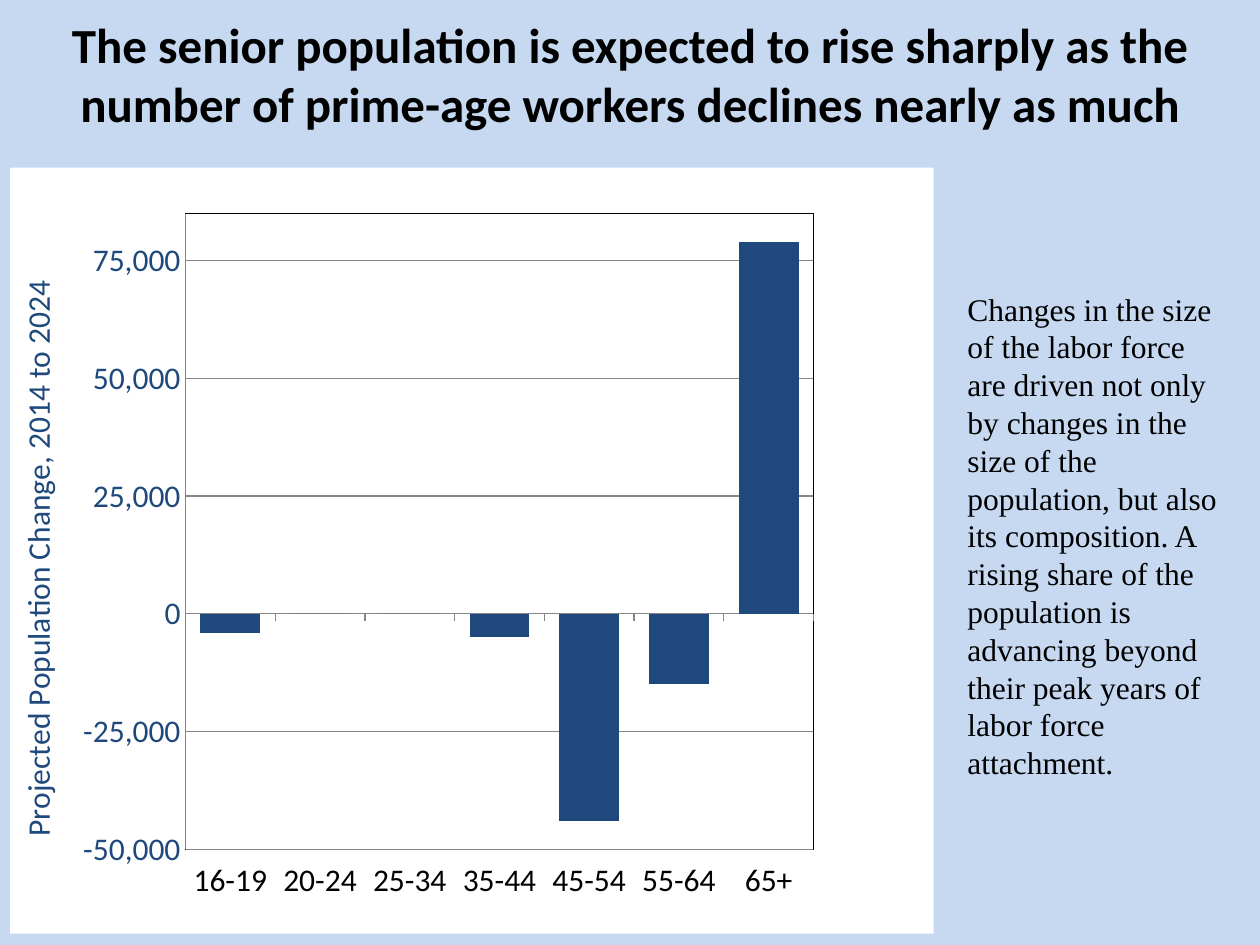
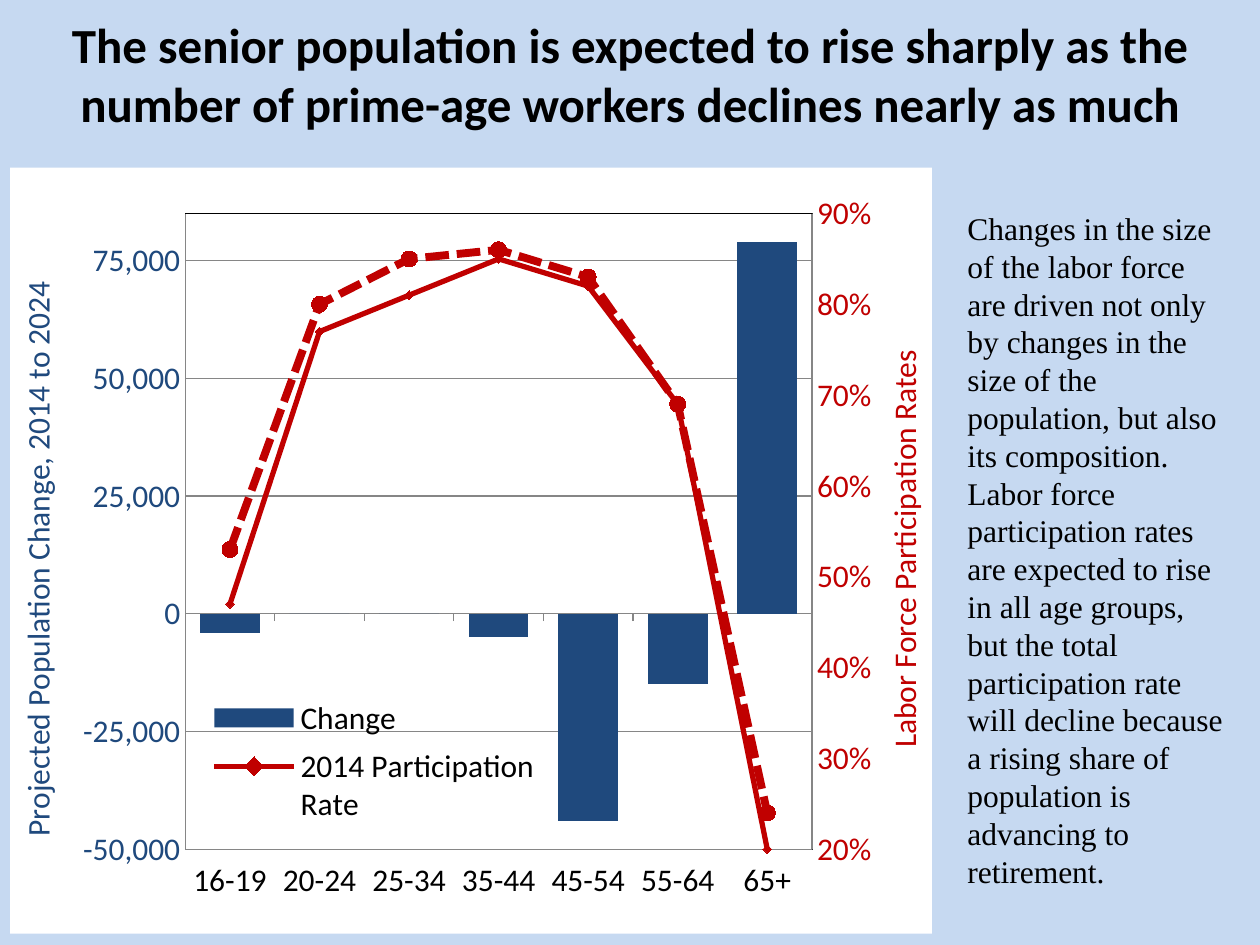
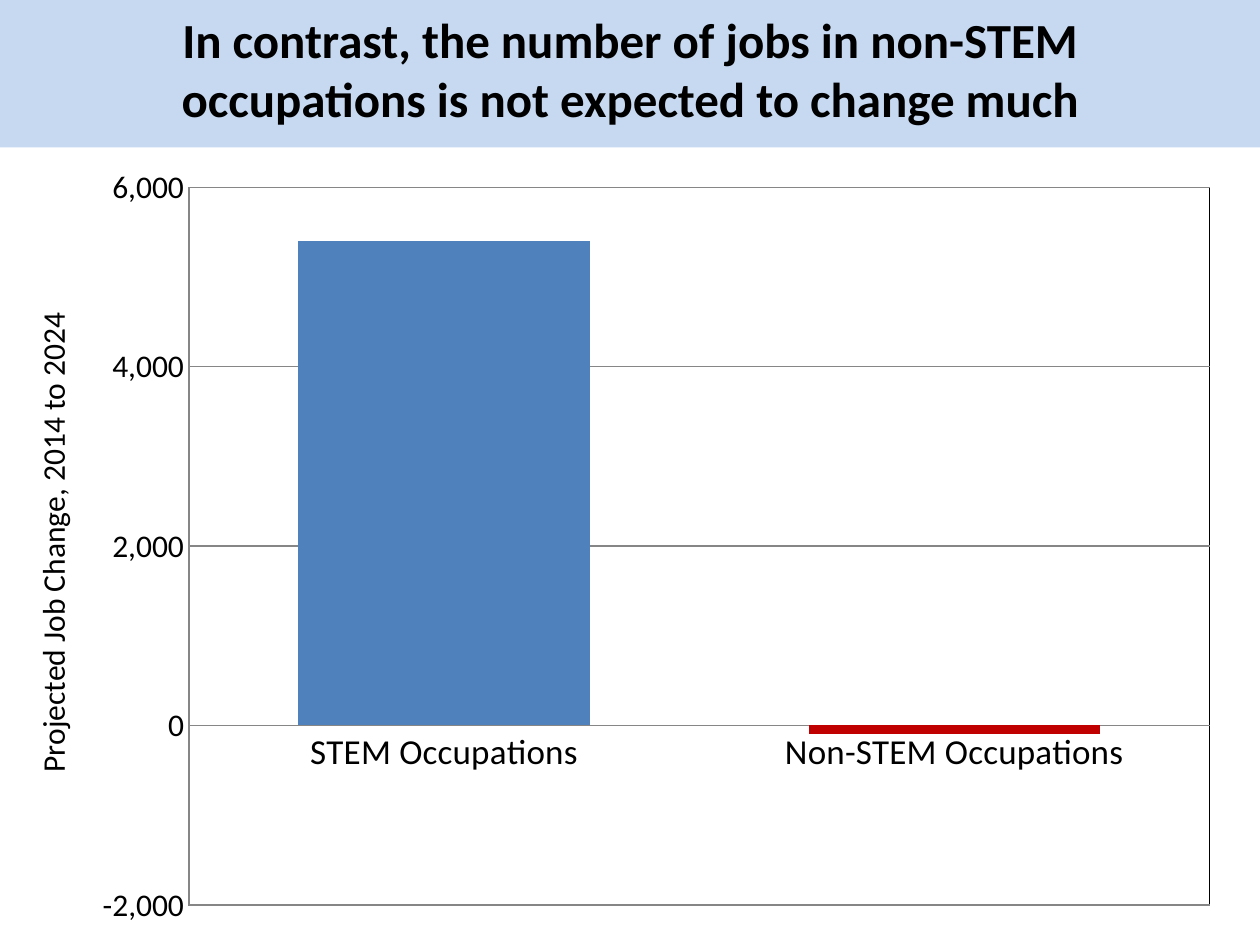
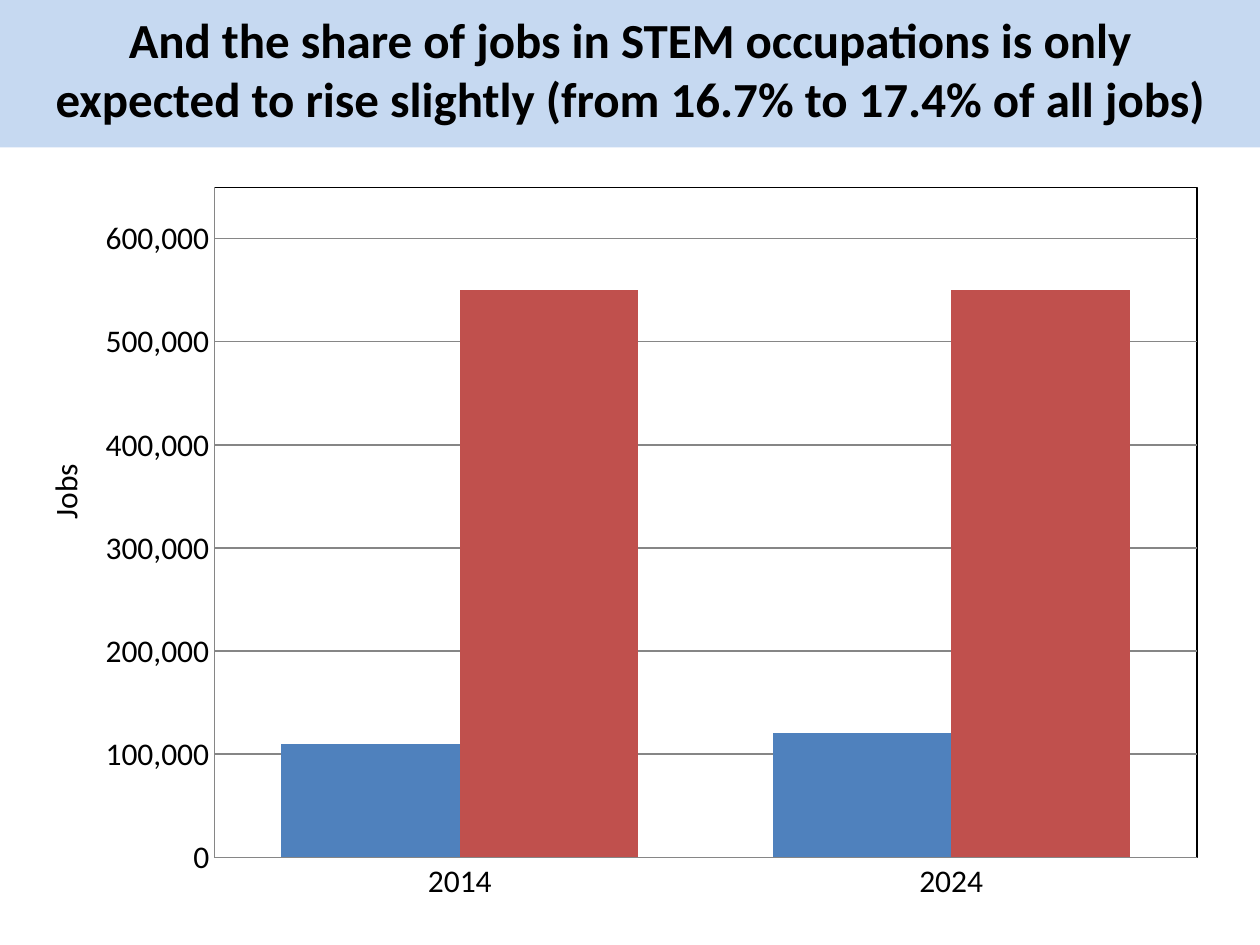
from pptx import Presentation
from pptx.chart.axis import ValueAxis
from pptx.chart.data import CategoryChartData
from pptx.dml.color import RGBColor
from pptx.enum.chart import (XL_CHART_TYPE, XL_LEGEND_POSITION, XL_MARKER_STYLE,
                             XL_TICK_LABEL_POSITION, XL_TICK_MARK)
from pptx.enum.dml import MSO_LINE
from pptx.enum.text import MSO_ANCHOR, PP_ALIGN
from pptx.oxml import parse_xml
from pptx.oxml.ns import nsdecls, qn
from pptx.util import Inches, Pt

# Shared style
COLORS = {"background": "C6D9F1", "text": "000000", "white": "FFFFFF",
          "grid": "868686", "navy": "1F497D", "red": "C00000",
          "blue": "4F81BD", "brick": "C0504D"}
TITLE_STYLE = {"name": "Calibri", "size": Pt(28), "bold": True}
BODY_STYLE = {"name": "Times New Roman", "size": Pt(18)}
LABEL_STYLE = {"name": "Calibri", "size": Pt(18), "bold": False}

# Content: boxes are left, top, width, height; layouts are fractions of the chart
AGES = ["16-19", "20-24", "25-34", "35-44", "45-54", "55-64", "65+"]
AGE_CHANGES = [-4000, 0, 0, -5000, -44000, -15000, 79000]
SENIOR_TITLE = ("The senior population is expected to rise sharply as the "
                "number of prime-age workers declines nearly as much")
BODY_START = ("Changes in the size of the labor force are driven not only by changes "
              "in the size of the population, but also its composition. ")
AGE_TITLE_BOX, JOB_TITLE_BOX = (0.15, 0.25, 9.7, 0.67), (0.2, 0.08, 9.6, 0.92)

AGE_CHART = {
    "box": (0.08, 1.33, 7.33, 6.08), "plot": (0.19, 0.06, 0.68, 0.83),
    "categories": AGES, "gap": 50, "low_labels": True,
    "axis": {"title": "Projected Population Change, 2014 to 2024", "color": "navy",
             "scale": (-50000, 85000, 25000), "format": "#,##0", "at": (0, 0.14)},
}
JOB_CHART = {"box": (0, 1.17, 10, 6.33), "gap": 75}

SLIDES = [
    {"title": SENIOR_TITLE, "title_box": AGE_TITLE_BOX, "body_box": (7.58, 2.25, 2.25, 4.04),
     "body": BODY_START + "A rising share of the population is advancing beyond "
                          "their peak years of labor force attachment.",
     "chart": {**AGE_CHART, "series": [("Series 1", AGE_CHANGES, "navy")]}},
    {"title": SENIOR_TITLE, "title_box": AGE_TITLE_BOX, "body_box": (7.58, 1.61, 2.25, 5.55),
     "body": BODY_START + "Labor force participation rates are expected to rise in all age "
                          "groups, but the total participation rate will decline because "
                          "a rising share of population is advancing to retirement.",
     "chart": {**AGE_CHART,
               "series": [("Change", AGE_CHANGES, "navy"),
                          ("2014 Participation Rate",
                           [0.47, 0.77, 0.81, 0.85, 0.82, 0.69, 0.2], "red"),
                          ("2024 Participation Rate",
                           [0.53, 0.8, 0.85, 0.86, 0.83, 0.69, 0.24], "red")],
               "lines": [(3, MSO_LINE.SOLID, XL_MARKER_STYLE.DIAMOND, 5),
                         (4.5, MSO_LINE.SQUARE_DOT, XL_MARKER_STYLE.CIRCLE, 9)],
               "right_axis": {"title": "Labor Force Participation Rates", "color": "red",
                              "scale": (0.2, 0.9, 0.1), "format": "0%", "at": (0.94, 0.23)},
               "legend": (0.21, 0.68, 0.37, 0.19)}},
    {"title": "In contrast, the number of jobs in non-STEM\n"
              "occupations is not expected to change much",
     "title_box": JOB_TITLE_BOX,
     "chart": {**JOB_CHART, "plot": (0.15, 0.05, 0.81, 0.9), "category_size": 20,
               "categories": ["STEM Occupations", "Non-STEM Occupations"],
               "series": [("Series 1", [5400, -100], "blue")], "points": {1: "red"},
               "axis": {"title": "Projected Job Change, 2014 to 2024", "color": "text",
                        "scale": (-2000, 6000, 2000), "format": "#,##0",
                        "at": (0.02, 0.2)}}},
    {"title": "And the share of jobs in STEM occupations is only expected "
              "to rise slightly (from 16.7% to 17.4% of all jobs)",
     "title_box": JOB_TITLE_BOX,
     "chart": {**JOB_CHART, "plot": (0.17, 0.05, 0.78, 0.84), "categories": ["2014", "2024"],
               "series": [("STEM Occupations", [110000, 120000], "blue"),
                          ("Non-STEM Occupations", [550000, 550000], "brick")],
               "axis": {"title": "Jobs", "color": "text", "scale": (0, 650000, 100000),
                        "format": "#,##0", "at": (0.03, 0.39)}}},
]


def color(name):
    return RGBColor.from_string(COLORS[name])


def style_font(font, style, color_name="text"):
    for attribute, value in style.items():
        setattr(font, attribute, value)
    font.color.rgb = color(color_name)


def fill_solid(fill, color_name):
    fill.solid()
    fill.fore_color.rgb = color(color_name)


def style_line(line, color_name, width=0.75):
    line.color.rgb = color(color_name)
    line.width = Pt(width)


def add_text(page, text, place, style, align=PP_ALIGN.LEFT, anchor=MSO_ANCHOR.TOP):
    box = page.shapes.add_textbox(*map(Inches, place))
    frame = box.text_frame
    frame.word_wrap = True
    frame.vertical_anchor = anchor
    para = frame.paragraphs[0]
    para.text = text
    para.alignment = align
    for span in para.runs:
        style_font(span.font, style)


# Chart parts that need XML
def set_layout(element, place, index, inner=False):
    """Give a plot area, title or legend a fixed place."""
    old = element.find(qn("c:layout"))
    if old is not None:
        index = element.index(old)
        element.remove(old)
    target = '<c:layoutTarget val="inner"/>' if inner else ""
    modes = "".join(f'<c:{name}Mode val="edge"/>' for name in "xy")
    values = "".join(f'<c:{name} val="{value}"/>' for name, value in zip("xywh", place))
    element.insert(index, parse_xml(
        f'<c:layout {nsdecls("c")}><c:manualLayout>{target}{modes}{values}'
        '</c:manualLayout></c:layout>'))


def shape_properties(fill, line):
    def solid(name):
        return (f'<a:solidFill><a:srgbClr val="{COLORS[name]}"/></a:solidFill>'
                if name else "<a:noFill/>")
    return parse_xml(f'<c:spPr {nsdecls("c", "a")}>{solid(fill)}'
                     f'<a:ln w="{Pt(0.75)}">{solid(line)}</a:ln></c:spPr>')


def move_to_right_axis(chart, line_styles):
    """Turn all series after the first into lines on a second value axis."""
    area = chart._chartSpace.chart.plotArea
    bars = area.find(qn("c:barChart"))
    lines = parse_xml(f'<c:lineChart {nsdecls("c")}><c:grouping val="standard"/>'
                      '<c:varyColors val="0"/><c:marker val="1"/>'
                      '<c:axId val="5001"/><c:axId val="5002"/></c:lineChart>')
    for offset, series in enumerate(bars.findall(qn("c:ser"))[1:]):
        for flag in series.findall(qn("c:invertIfNegative")):
            series.remove(flag)
        lines.insert(2 + offset, series)
    bars.addnext(lines)

    def axis_xml(kind, number, other, deleted, side, crosses):
        return parse_xml(
            f'<c:{kind} {nsdecls("c")}><c:axId val="{number}"/><c:scaling>'
            f'<c:orientation val="minMax"/></c:scaling><c:delete val="{deleted}"/>'
            f'<c:axPos val="{side}"/><c:majorTickMark val="none"/>'
            '<c:minorTickMark val="none"/><c:tickLblPos val="nextTo"/>'
            f'<c:crossAx val="{other}"/><c:crosses val="{crosses}"/></c:{kind}>')

    right = axis_xml("valAx", 5002, 5001, 0, "r", "max")
    area.findall(qn("c:valAx"))[-1].addnext(right)
    right.addnext(axis_xml("catAx", 5001, 5002, 1, "b", "autoZero"))
    for series, (width, dash, symbol, size) in zip(chart.plots[1].series, line_styles):
        series.smooth = False
        style_line(series.format.line, "red", width)
        series.format.line.dash_style = dash
        series.marker.style = symbol
        series.marker.size = size
        fill_solid(series.marker.format.fill, "red")
        style_line(series.marker.format.line, "red")
    return ValueAxis(right)


def style_value_axis(axis, settings, gridlines):
    axis.minimum_scale, axis.maximum_scale, axis.major_unit = settings["scale"]
    axis.major_tick_mark = axis.minor_tick_mark = XL_TICK_MARK.NONE
    axis.has_major_gridlines = gridlines
    if gridlines:
        style_line(axis.major_gridlines.format.line, "grid")
    style_line(axis.format.line, "grid")
    labels = axis.tick_labels
    labels.number_format = settings["format"]
    labels.number_format_is_linked = False
    style_font(labels.font, LABEL_STYLE, settings["color"])
    title = axis.axis_title
    title.text_frame.text = settings["title"]
    style_font(title.text_frame.paragraphs[0].runs[0].font, LABEL_STYLE, settings["color"])
    title._element.find(".//" + qn("a:bodyPr")).set("rot", "-5400000")
    set_layout(title._element, settings["at"], 1)


def add_legend(chart, place):
    chart.has_legend = True
    legend = chart.legend
    legend.position = XL_LEGEND_POSITION.RIGHT
    legend.include_in_layout = True
    style_font(legend.font, LABEL_STYLE)
    set_layout(legend._element, place, 1)
    # Only the first two series are listed
    legend._element.insert(1, parse_xml(
        f'<c:legendEntry {nsdecls("c")}><c:idx val="2"/><c:delete val="1"/></c:legendEntry>'))


def add_column_chart(page, content):
    data = CategoryChartData()
    data.categories = content["categories"]
    for name, values, _ in content["series"]:
        data.add_series(name, values)
    chart = page.shapes.add_chart(XL_CHART_TYPE.COLUMN_CLUSTERED,
                                  *map(Inches, content["box"]), data).chart
    chart.has_title = chart.has_legend = False
    style_font(chart.font, {"name": "Calibri", "size": Pt(10)})

    # Value axes: the left one is styled while it is the only one
    style_value_axis(chart.value_axis, content["axis"], True)
    if "lines" in content:
        right_axis = move_to_right_axis(chart, content["lines"])
        style_value_axis(right_axis, content["right_axis"], False)

    # Columns
    columns = chart.plots[0]
    columns.gap_width = content["gap"]
    columns.vary_by_categories = False
    for series, (_, _, color_name) in zip(columns.series, content["series"]):
        series.invert_if_negative = False
        fill_solid(series.format.fill, color_name)
    for index, color_name in content.get("points", {}).items():
        fill_solid(columns.series[0].points[index].format.fill, color_name)

    # Category axis
    axis = chart.category_axis
    low = content.get("low_labels", False)
    axis.major_tick_mark = XL_TICK_MARK.OUTSIDE if low else XL_TICK_MARK.NONE
    axis.minor_tick_mark = XL_TICK_MARK.NONE
    axis.tick_label_position = (XL_TICK_LABEL_POSITION.LOW if low
                                else XL_TICK_LABEL_POSITION.NEXT_TO_AXIS)
    style_line(axis.format.line, "grid")
    style_font(axis.tick_labels.font,
               {**LABEL_STYLE, "size": Pt(content.get("category_size", 18))})

    # Plot frame, chart background and legend
    space = chart._chartSpace
    area = space.chart.plotArea
    set_layout(area, content["plot"], 0, inner=True)
    area.append(shape_properties(None, "text"))
    space.find(qn("c:txPr")).addprevious(shape_properties("white", None))
    if "legend" in content:
        add_legend(chart, content["legend"])


def main():
    deck = Presentation()
    deck.slide_width, deck.slide_height = Inches(10), Inches(7.5)
    for content in SLIDES:
        page = deck.slides.add_slide(deck.slide_layouts[6])
        fill_solid(page.background.fill, "background")
        add_text(page, content["title"], content["title_box"], TITLE_STYLE,
                 PP_ALIGN.CENTER, MSO_ANCHOR.MIDDLE)
        if "body" in content:
            add_text(page, content["body"], content["body_box"], BODY_STYLE)
        add_column_chart(page, content["chart"])
    deck.save("out.pptx")


if __name__ == "__main__":
    main()
